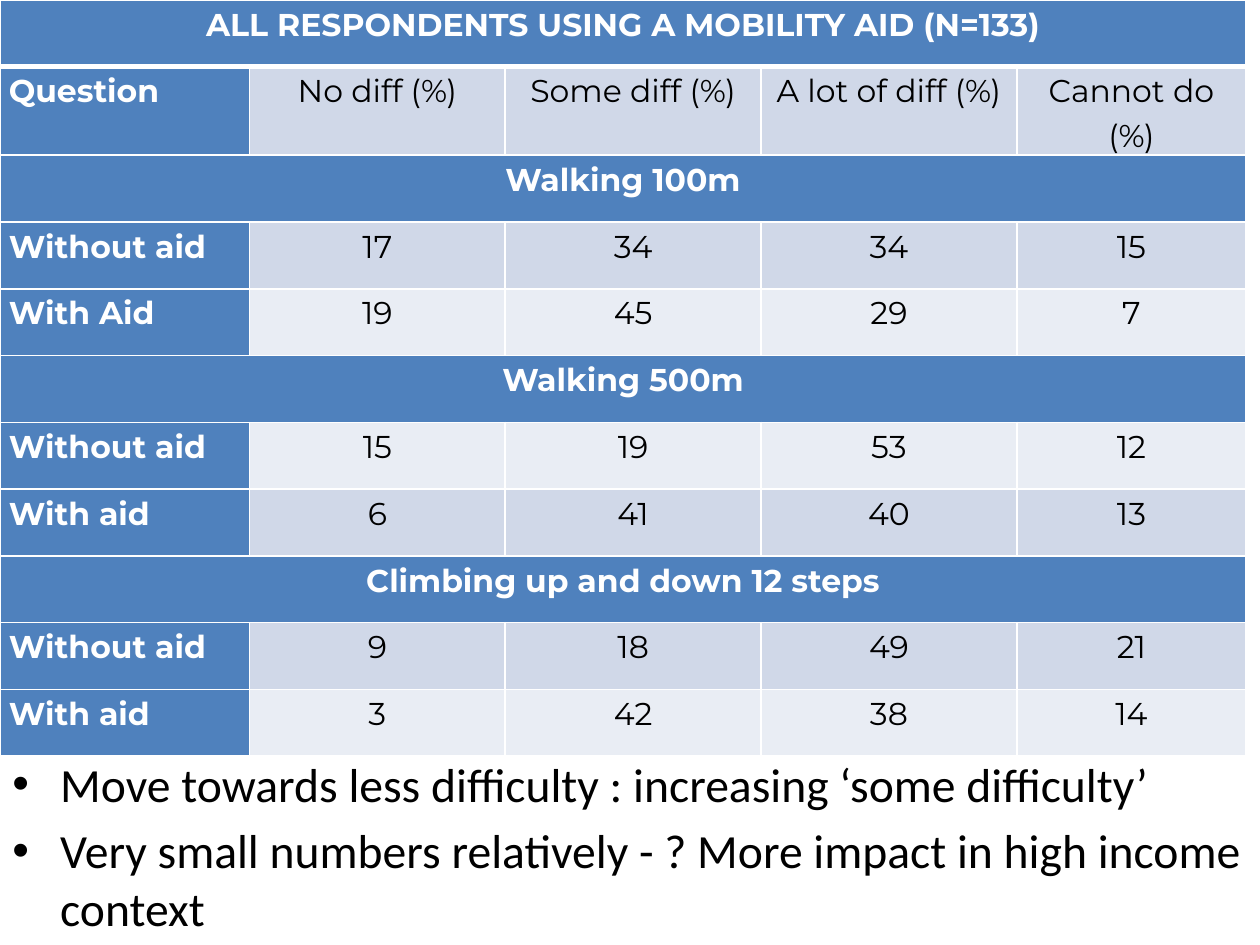
import pptx
import pptx.util
import pptx.dml.color
import pptx.enum.text
import lxml.etree
from pptx.util import Inches

BLUE = pptx.dml.color.RGBColor(0x4F, 0x81, 0xBD)
DARK_BAND = pptx.dml.color.RGBColor(0xD0, 0xD8, 0xE8)
LIGHT_BAND = pptx.dml.color.RGBColor(0xE9, 0xED, 0xF4)
WHITE = pptx.dml.color.RGBColor(0xFF, 0xFF, 0xFF)
BLACK = pptx.dml.color.RGBColor(0x00, 0x00, 0x00)
A = "{http://schemas.openxmlformats.org/drawingml/2006/main}"


def add_border(cell, side, points):
    line = lxml.etree.SubElement(cell._tc.get_or_add_tcPr(), A + side, w=str(pptx.util.Pt(points)))
    fill = lxml.etree.SubElement(line, A + "solidFill")
    lxml.etree.SubElement(fill, A + "srgbClr", val=str(WHITE))


prs = pptx.Presentation()
prs.slide_width = Inches(10)
prs.slide_height = Inches(7.5)
slide = prs.slides.add_slide(prs.slide_layouts[6])

rows = [
    (["ALL RESPONDENTS USING A MOBILITY AID (N=133)"], BLUE),
    (["Question", "No diff (%)", "Some diff (%)", "A lot of diff (%)", "Cannot do (%)"], DARK_BAND),
    (["Walking 100m"], BLUE),
    (["Without aid", "17", "34", "34", "15"], DARK_BAND),
    (["With Aid", "19", "45", "29", "7"], LIGHT_BAND),
    (["Walking 500m"], BLUE),
    (["Without aid", "15", "19", "53", "12"], LIGHT_BAND),
    (["With aid", "6", "41", "40", "13"], DARK_BAND),
    (["Climbing up and down 12 steps"], BLUE),
    (["Without aid", "9", "18", "49", "21"], DARK_BAND),
    (["With aid", "3", "42", "38", "14"], LIGHT_BAND),
]
column_widths = [1.98, 2.03, 2.03, 2.03, 1.82]

results = slide.shapes.add_table(
    len(rows), len(column_widths), 0, 0, Inches(9.88), Inches(5.95)
).table
results.first_row = False
results.horz_banding = False
for column, width in zip(results.columns, column_widths):
    column.width = Inches(width)

for r, (texts, band) in enumerate(rows):
    results.rows[r].height = Inches(0.59 if r == 1 else 0.53)
    is_heading = len(texts) == 1
    if is_heading:
        results.cell(r, 0).merge(results.cell(r, len(column_widths) - 1))
    for c in range(len(column_widths)):
        cell = results.cell(r, c)
        is_label = is_heading or c == 0
        cell.margin_left = cell.margin_right = Inches(0.07)
        cell.margin_top = cell.margin_bottom = 0
        for side in ("lnL", "lnR", "lnT", "lnB"):
            under_title = (r, side) in ((0, "lnB"), (1, "lnT"))
            add_border(cell, side, 3 if under_title else 1)
        cell.fill.solid()
        cell.fill.fore_color.rgb = BLUE if is_label else band
        if c >= len(texts):
            continue
        cell.text_frame.text = texts[c]
        paragraph = cell.text_frame.paragraphs[0]
        paragraph.line_spacing = 1.15
        if is_heading or c > 0:
            paragraph.alignment = pptx.enum.text.PP_ALIGN.CENTER
        font = paragraph.runs[0].font
        font.name = "Montserrat"
        font.size = pptx.util.Pt(18)
        font.bold = is_label
        font.color.rgb = WHITE if is_label else BLACK

findings = slide.shapes.add_textbox(0, Inches(5.94), Inches(10), Inches(1.56)).text_frame
findings.word_wrap = True
findings.text = (
    "Move towards less difficulty : increasing ‘some difficulty’\n"
    "Very small numbers relatively - ? More impact in high income context"
)
for paragraph in findings.paragraphs:
    paragraph.space_before = pptx.util.Pt(5.4)
    properties = paragraph._p.get_or_add_pPr()
    properties.set("marL", str(Inches(0.38)))
    properties.set("indent", str(-Inches(0.38)))
    lxml.etree.SubElement(properties, A + "buFont", typeface="Arial")
    lxml.etree.SubElement(properties, A + "buChar", char="•")
    font = paragraph.runs[0].font
    font.name = "Calibri"
    font.size = pptx.util.Pt(27.2)
    font.color.rgb = BLACK

prs.save("out.pptx")
